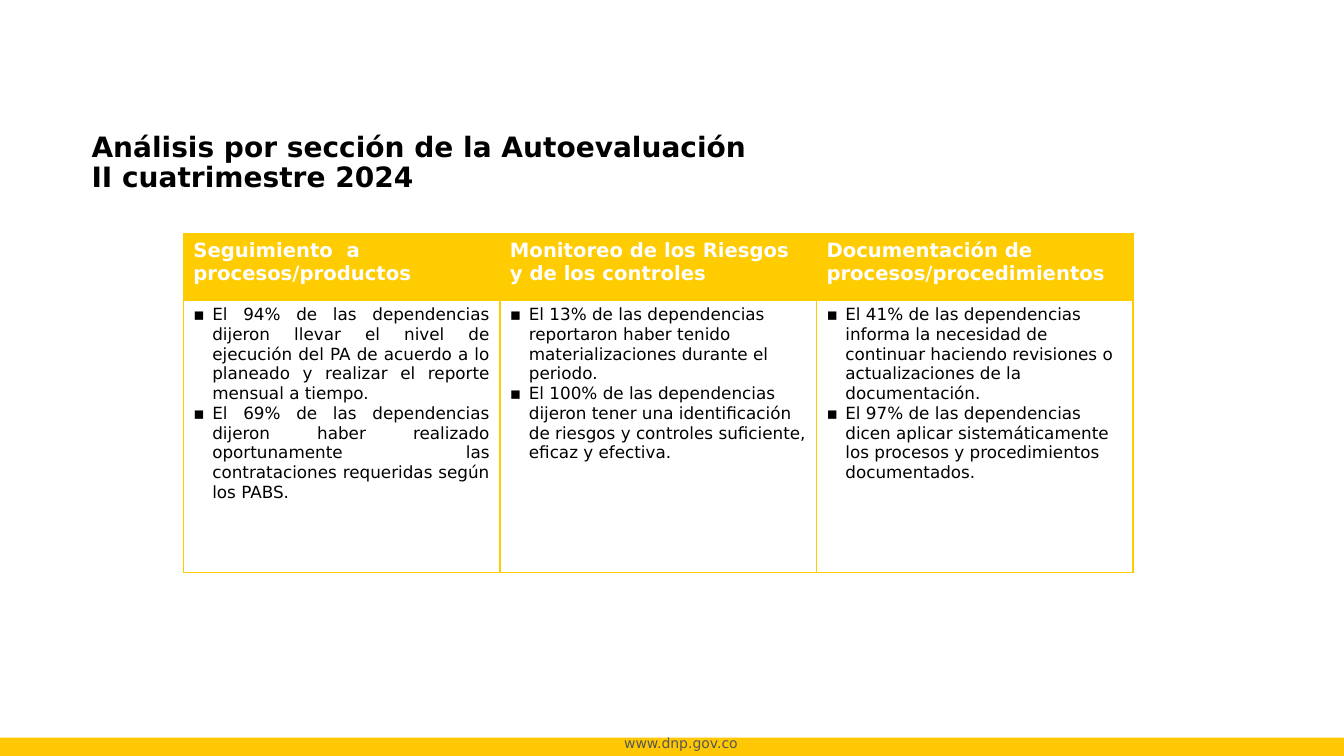
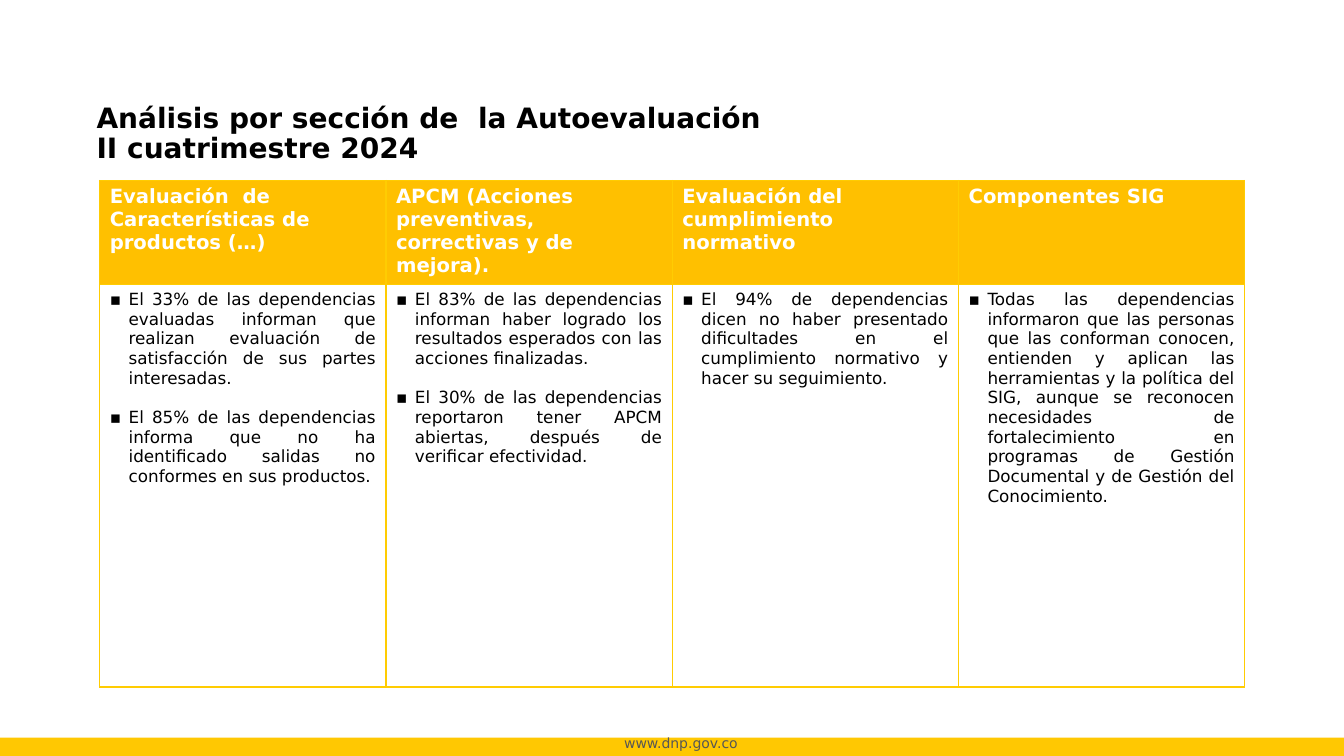
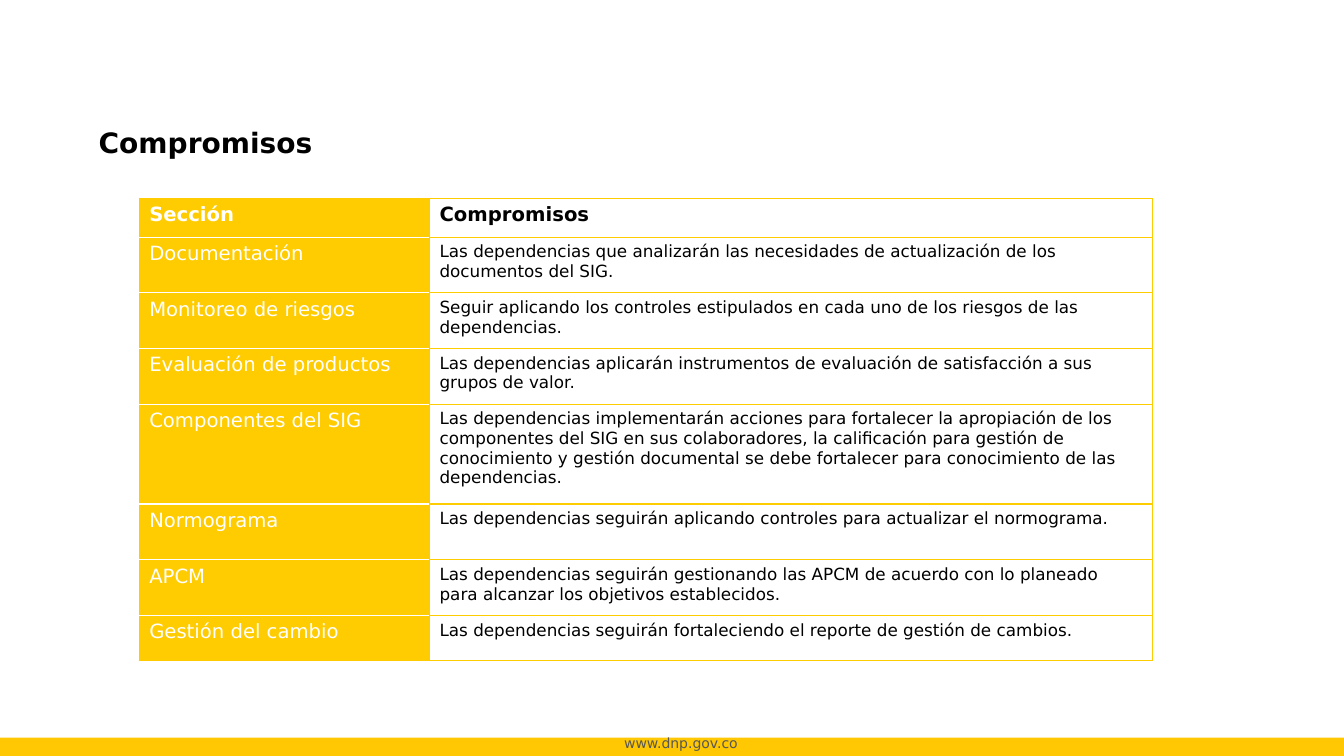
import pptx
import pptx.dml.color
import pptx.enum.text
import pptx.oxml
import pptx.oxml.ns
import pptx.util

Pt = pptx.util.Pt
ALIGN = pptx.enum.text.PP_ALIGN
ANCHOR = pptx.enum.text.MSO_ANCHOR

# Shared style
FONT = "DejaVu Sans"
YELLOW, AMBER, BAND = "FFCC02", "FFC000", "FFC802"
WHITE, BLACK, GREY = "FFFFFF", "000000", "575756"
WIDTH, HEIGHT = 960, 540
TITLE_SIZE, HEAD_SIZE, BODY_SIZE, FOOTER_SIZE = 20, 14, 12, 10
INDENT = 13.5
FOOTER = "www.dnp.gov.co"

# Content: each section is (heading, justified, bullets); boxes are (left, top, width, height)
SECTION_SLIDES = [
    {
        "title": "Análisis por sección de la Autoevaluación\vII cuatrimestre 2024",
        "title_box": (58.3, 77, 792, 64.8),
        "table_at": (131, 167),
        "col_width": 226.1,
        "rows": (47.5, 194.4),
        "head_fill": YELLOW,
        "gap": 0,
        "sections": [
            ("Seguimiento  a procesos/productos", True, [
                "El 94% de las dependencias dijeron llevar el nivel de ejecución del PA de acuerdo a lo "
                "planeado y realizar el reporte mensual a tiempo.",
                "El 69% de las dependencias dijeron haber realizado oportunamente las contrataciones "
                "requeridas según los PABS."]),
            ("Monitoreo de los Riesgos y de los controles", False, [
                "El 13% de las dependencias reportaron haber tenido materializaciones durante el periodo.",
                "El 100% de las dependencias dijeron tener una identificación de riesgos y controles "
                "suficiente, eficaz y efectiva."]),
            ("Documentación de procesos/procedimientos", False, [
                "El 41% de las dependencias informa la necesidad de continuar haciendo revisiones o "
                "actualizaciones de la documentación.",
                "El 97% de las dependencias dicen aplicar sistemáticamente los procesos y procedimientos "
                "documentados."]),
        ],
    },
    {
        "title": "Análisis por sección de  la Autoevaluación\vII cuatrimestre 2024",
        "title_box": (61.9, 56.2, 792, 64.8),
        "table_at": (71.2, 128.9),
        "col_width": 204.5,
        "rows": (67.7, 287.3),
        "head_fill": AMBER,
        "gap": 14,
        "sections": [
            ("Evaluación  de Características de productos (…)", True, [
                "El 33% de las dependencias evaluadas informan que realizan evaluación de satisfacción "
                "de sus partes interesadas.",
                "El 85% de las dependencias informa que no ha identificado salidas no conformes en sus "
                "productos."]),
            ("APCM (Acciones preventivas, correctivas y de mejora).", True, [
                "El 83% de las dependencias informan haber logrado los resultados esperados con las "
                "acciones finalizadas.",
                "El 30% de las dependencias reportaron tener APCM abiertas, después de verificar "
                "efectividad."]),
            ("Evaluación del cumplimiento normativo", True, [
                "El 94% de dependencias dicen no haber presentado dificultades en el cumplimiento "
                "normativo y hacer su seguimiento."]),
            ("Componentes SIG", True, [
                "Todas las dependencias informaron que las personas que las conforman conocen, entienden "
                "y aplican las herramientas y la política del SIG, aunque se reconocen necesidades de "
                "fortalecimiento en programas de Gestión Documental y de Gestión del Conocimiento."]),
        ],
    },
]

COMMITMENTS_TITLE = "Compromisos"
COMMITMENTS_TITLE_BOX = (63.4, 77, 384.5, 40.3)
COMMITMENTS_AT = (99.4, 141.8)
COMMITMENTS_COLS = (207.4, 516.2)
# (section, commitment, row height)
COMMITMENTS = [
    ("Sección", "Compromisos", 27.6),
    ("Documentación",
     "Las dependencias que analizarán las necesidades de actualización de los documentos del SIG.", 39.8),
    ("Monitoreo de riesgos",
     "Seguir aplicando los controles estipulados en cada uno de los riesgos de las dependencias.", 39.8),
    ("Evaluación de productos",
     "Las dependencias aplicarán instrumentos de evaluación de satisfacción a sus grupos de valor.", 39.8),
    ("Componentes del SIG",
     "Las dependencias implementarán acciones para fortalecer la apropiación de los componentes del SIG "
     "en sus colaboradores, la calificación para gestión de conocimiento y gestión documental se debe "
     "fortalecer para conocimiento de las dependencias.", 71.3),
    ("Normograma",
     "Las dependencias seguirán aplicando controles para actualizar el normograma.", 39.8),
    ("APCM",
     "Las dependencias seguirán gestionando las APCM de acuerdo con lo planeado para alcanzar los "
     "objetivos establecidos.", 39.8),
    ("Gestión del cambio",
     "Las dependencias seguirán fortaleciendo el reporte de gestión de cambios.", 32.4),
]


def rgb(color):
    return pptx.dml.color.RGBColor.from_string(color)


def style(p, size, color, bold=False):
    for r in p.runs:
        r.font.name = FONT
        r.font.size = Pt(size)
        r.font.bold = bold
        r.font.color.rgb = rgb(color)


def add_text(s, box, text, size, color, bold=False):
    tf = s.shapes.add_textbox(*map(Pt, box)).text_frame
    tf.word_wrap = True
    p = tf.paragraphs[0]
    p.text = text
    style(p, size, color, bold)
    return tf


def add_slide(prs, title, title_box):
    s = prs.slides.add_slide(prs.slide_layouts[6])
    # Footer band and web address
    band = s.shapes.add_shape(pptx.enum.shapes.MSO_SHAPE.RECTANGLE,
                              0, Pt(527), Pt(WIDTH), Pt(14.4))
    band.shadow.inherit = False
    band.fill.solid()
    band.fill.fore_color.rgb = rgb(BAND)
    band.line.fill.background()
    footer = add_text(s, (410.4, 521.3, 152, 19.4), FOOTER, FOOTER_SIZE, GREY)
    footer.paragraphs[0].alignment = ALIGN.CENTER
    # Title
    tf = add_text(s, title_box, title, TITLE_SIZE, BLACK, True)
    tf.vertical_anchor = ANCHOR.BOTTOM
    tf.paragraphs[0].line_spacing = 0.9
    return s


def add_table(s, at, cols, rows):
    frame = s.shapes.add_table(len(rows), len(cols), *map(Pt, (*at, sum(cols), sum(rows))))
    table = frame.table
    table.first_row = table.horz_banding = False
    for column, width in zip(table.columns, cols):
        column.width = Pt(width)
    for row, height in zip(table.rows, rows):
        row.height = Pt(height)
    return table


def fill_cell(cell, lines, size, color, fill, bold=False, top=YELLOW, bottom=YELLOW):
    tcPr = cell._tc.get_or_add_tcPr()
    for side, line in zip("LRTB", (YELLOW, YELLOW, top, bottom)):
        tcPr.append(pptx.oxml.parse_xml(
            f'<a:ln{side} {pptx.oxml.ns.nsdecls("a")} w="{Pt(1)}"><a:solidFill>'
            f'<a:srgbClr val="{line}"/></a:solidFill></a:ln{side}>'))
    cell.fill.solid()
    cell.fill.fore_color.rgb = rgb(fill)
    cell.text_frame.text = "\n".join(lines)
    for p in cell.text_frame.paragraphs:
        style(p, size, color, bold)


def add_bullets(tf, justified, gap):
    for i, p in enumerate(tf.paragraphs):
        pPr = p._p.get_or_add_pPr()
        pPr.set("marL", str(Pt(INDENT)))
        pPr.set("indent", str(-Pt(INDENT)))
        for tag in (f'buFont {{}} typeface="{FONT}"', 'buChar {} char="▪"'):
            pPr.append(pptx.oxml.parse_xml(f'<a:{tag.format(pptx.oxml.ns.nsdecls("a"))}/>'))
        if justified:
            p.alignment = ALIGN.JUSTIFY
        if i and gap:
            p.space_before = Pt(gap)


def add_section_slide(prs, data):
    s = add_slide(prs, data["title"], data["title_box"])
    sections = data["sections"]
    table = add_table(s, data["table_at"], [data["col_width"]] * len(sections), data["rows"])
    for col, (heading, justified, bullets) in enumerate(sections):
        fill_cell(table.cell(0, col), [heading], HEAD_SIZE, WHITE, data["head_fill"], True)
        body = table.cell(1, col)
        fill_cell(body, bullets, BODY_SIZE, BLACK, WHITE)
        add_bullets(body.text_frame, justified, data["gap"])


def add_commitments_slide(prs):
    s = add_slide(prs, COMMITMENTS_TITLE, COMMITMENTS_TITLE_BOX)
    table = add_table(s, COMMITMENTS_AT, COMMITMENTS_COLS, [row[2] for row in COMMITMENTS])
    last = len(COMMITMENTS) - 1
    for i, (section, commitment, _) in enumerate(COMMITMENTS):
        head = i == 0
        fill_cell(table.cell(i, 0), [section], HEAD_SIZE, WHITE, YELLOW, head,
                  top=YELLOW if head else WHITE, bottom=YELLOW if i == last else WHITE)
        fill_cell(table.cell(i, 1), [commitment], HEAD_SIZE if head else BODY_SIZE,
                  BLACK, WHITE, head)


def main():
    prs = pptx.Presentation()
    prs.slide_width, prs.slide_height = Pt(WIDTH), Pt(HEIGHT)
    for data in SECTION_SLIDES:
        add_section_slide(prs, data)
    add_commitments_slide(prs)
    prs.save("out.pptx")


if __name__ == "__main__":
    import pptx.enum.shapes
    main()
